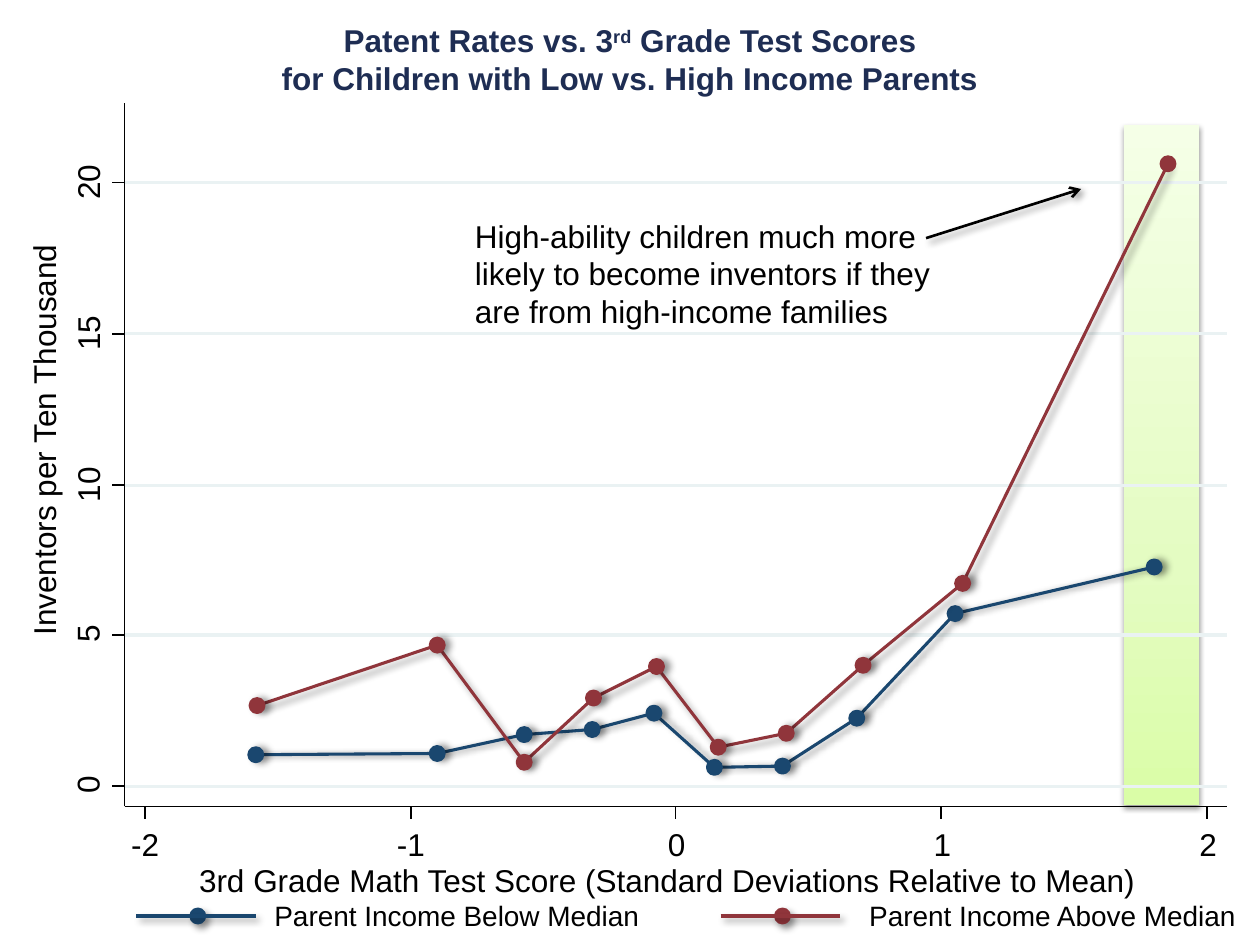
from typing import NamedTuple

from lxml.etree import SubElement
from pptx import Presentation
from pptx.dml.color import RGBColor
from pptx.enum.shapes import MSO_CONNECTOR, MSO_SHAPE
from pptx.enum.text import MSO_AUTO_SIZE, PP_ALIGN
from pptx.oxml.ns import qn
from pptx.util import Emu, Pt

PX = 9144  # EMU per px, 100 px to the inch
FONT = "Arial"
BLACK = RGBColor(0x00, 0x00, 0x00)
NAVY = RGBColor(0x1E, 0x2D, 0x53)
BLUE = RGBColor(0x1A, 0x47, 0x6F)
RED = RGBColor(0x90, 0x35, 0x3B)
GRID = RGBColor(0xEA, 0xF2, 0xF3)
BAND_STOPS = (
    (0, RGBColor(0xDA, 0xFD, 0xA7)),
    (35, RGBColor(0xE4, 0xFC, 0xC2)),
    (100, RGBColor(0xF5, 0xFF, 0xE7)),
)

AXIS_LEFT, AXIS_RIGHT, AXIS_TOP, AXIS_BOTTOM = 99, 974, 82, 640
TICK_LENGTH = 10
DOT_SIZE = 11
LEGEND_Y = 727


class Shadow(NamedTuple):
    alpha: int
    blur: float
    distance: float
    angle: int


class Series(NamedTuple):
    name: str
    color: RGBColor
    points: tuple
    line_shadow: Shadow
    last_dot_shadow: Shadow | None
    legend_left: int
    label_left: int
    label_width: int


RIGHT_SHADOW = Shadow(40, 4, 3, 0)
DIAGONAL_SHADOW = Shadow(40, 4, 3, 45)
BAND_SHADOW = Shadow(38, 3.1, 1.6, 90)

SERIES = (
    Series(
        "Parent Income Below Median", BLUE,
        ((203, 599), (347, 598), (416, 583), (470, 579), (519, 566),
         (567, 609), (621, 608), (680, 570), (758, 487), (916, 450)),
        RIGHT_SHADOW, RIGHT_SHADOW, 108, 208, 313,
    ),
    Series(
        "Parent Income Above Median", RED,
        ((204, 560), (347, 512), (416, 605), (471, 554), (521, 529),
         (570, 593), (624, 582), (685, 528), (764, 463), (927, 130)),
        DIAGONAL_SHADOW, None, 572, 680, 315,
    ),
)


def px(*lengths: int) -> list[Emu]:
    return [Emu(round(length * PX)) for length in lengths]


def set_shadow(item, shadow: Shadow | None) -> None:
    """Give a shape or connector this shadow, or none; call it after its fill and line are set."""
    properties = item.element.spPr
    effects = SubElement(properties, qn("a:effectLst"))
    if shadow:
        outer = SubElement(
            effects, qn("a:outerShdw"), blurRad=str(Pt(shadow.blur)),
            dist=str(Pt(shadow.distance)), dir=str(shadow.angle * 60000), rotWithShape="0",
        )
        color = SubElement(outer, qn("a:srgbClr"), val=str(BLACK))
        SubElement(color, qn("a:alpha"), val=str(shadow.alpha * 1000))


def add_line(slide, start: tuple, end: tuple, color: RGBColor, width: float,
             shadow: Shadow | None = None, arrow: bool = False) -> None:
    line = slide.shapes.add_connector(MSO_CONNECTOR.STRAIGHT, *px(*start, *end))
    line.line.color.rgb = color
    line.line.width = Pt(width)
    if arrow:
        SubElement(line.line._get_or_add_ln(), qn("a:tailEnd"), type="arrow")
    set_shadow(line, shadow)


def add_dot(slide, center: tuple, color: RGBColor, shadow: Shadow | None) -> None:
    left, top = (value - DOT_SIZE / 2 for value in center)
    dot = slide.shapes.add_shape(MSO_SHAPE.OVAL, *px(left, top, DOT_SIZE, DOT_SIZE))
    dot.fill.solid()
    dot.fill.fore_color.rgb = color
    dot.line.color.rgb = color
    dot.line.width = Pt(1.75)
    set_shadow(dot, shadow)


def add_span(para, text: str, size: float, color: RGBColor, bold: bool = False,
             raised: bool = False) -> None:
    span = para.add_run()
    span.text = text
    span.font.name = FONT
    span.font.size = Pt(size)
    span.font.bold = bold
    span.font.color.rgb = color
    if raised:
        span.font._element.set("baseline", "30000")


def add_box(slide, frame: tuple, *, wrap: bool = False, inset: bool = False, rotation: int = 0):
    box = slide.shapes.add_textbox(*px(*frame))
    box.rotation = rotation
    text_frame = box.text_frame
    text_frame.word_wrap = wrap
    text_frame.auto_size = MSO_AUTO_SIZE.SHAPE_TO_FIT_TEXT
    if not inset:
        text_frame.margin_left = text_frame.margin_right = 0
        text_frame.margin_top = text_frame.margin_bottom = 0
    return text_frame


def add_label(slide, text: str, frame: tuple, size: float = 18, **layout) -> None:
    para = add_box(slide, frame, **layout).paragraphs[0]
    add_span(para, text, size, BLACK)


def add_band(slide) -> None:
    band = slide.shapes.add_shape(MSO_SHAPE.RECTANGLE, *px(892, 99, 60, 540))
    band.fill.gradient()
    band.fill.gradient_angle = 90
    stops = band.element.spPr.find(".//" + qn("a:gsLst"))
    for stop in list(stops):
        stops.remove(stop)
    for position, color in BAND_STOPS:
        stop = SubElement(stops, qn("a:gs"), pos=str(position * 1000))
        SubElement(stop, qn("a:srgbClr"), val=str(color))
    band.line.fill.background()
    set_shadow(band, BAND_SHADOW)


def add_title(slide) -> None:
    frame = add_box(slide, (0, 17, 1000, 61), wrap=True)
    first, second = frame.paragraphs[0], frame.add_paragraph()
    first.alignment = second.alignment = PP_ALIGN.CENTER
    add_span(first, "Patent Rates vs. 3", 18, NAVY, bold=True)
    add_span(first, "rd", 18, NAVY, bold=True, raised=True)
    add_span(first, " Grade Test Scores", 18, NAVY, bold=True)
    add_span(second, "for Children with Low vs. High Income Parents", 18, NAVY, bold=True)


def add_series(slide, series: Series) -> None:
    builder = slide.shapes.build_freeform(*series.points[0], scale=PX)
    builder.add_line_segments(series.points[1:], close=False)
    curve = builder.convert_to_shape()
    curve.fill.background()
    curve.line.color.rgb = series.color
    curve.line.width = Pt(1.75)
    set_shadow(curve, series.line_shadow)
    for point in series.points[:-1]:
        add_dot(slide, point, series.color, RIGHT_SHADOW)
    add_dot(slide, series.points[-1], series.color, series.last_dot_shadow)


def add_legend_entry(slide, series: Series) -> None:
    left = series.legend_left
    add_dot(slide, (left + 49, LEGEND_Y), series.color, DIAGONAL_SHADOW)
    add_line(slide, (left, LEGEND_Y), (left + 95, LEGEND_Y), series.color, 1.75, DIAGONAL_SHADOW)
    add_label(slide, series.name, (series.label_left, 708, series.label_width, 37), 16, inset=True)


def add_axes(slide, y_ticks: dict, x_ticks: dict) -> None:
    corner = (AXIS_LEFT, AXIS_BOTTOM)
    add_line(slide, corner, (AXIS_LEFT, AXIS_TOP), BLACK, 0.88)
    for value, y in y_ticks.items():
        add_line(slide, (AXIS_LEFT, y), (AXIS_LEFT - TICK_LENGTH, y), BLACK, 0.88)
        left, width = (59, 26) if value < 10 else (52, 41)
        add_label(slide, str(value), (left, y - 25, width, 36), rotation=270)
    add_line(slide, corner, (AXIS_RIGHT, AXIS_BOTTOM), BLACK, 0.88)
    for value, x in x_ticks.items():
        add_line(slide, (x, AXIS_BOTTOM), (x, AXIS_BOTTOM + TICK_LENGTH), BLACK, 0.88)
        offset, width = (11, 35) if value < 0 else (6, 26)
        add_label(slide, str(value), (x - offset, 655, width, 36))
    add_label(slide, "Inventors per Ten Thousand", (-122, 333, 313, 30), rotation=270)
    add_label(slide, "3rd Grade Math Test Score (Standard Deviations Relative to Mean)",
              (158, 683, 750, 30))


def main() -> None:
    deck = Presentation()
    deck.slide_width, deck.slide_height = px(1000, 750)
    slide = deck.slides.add_slide(deck.slide_layouts[6])
    y_ticks = {value: round(624 - 23.94 * value) for value in range(0, 21, 5)}
    x_ticks = {value: round(536.5 + 210.7 * value) for value in range(-2, 3)}

    add_band(slide)
    add_title(slide)
    for y in y_ticks.values():
        add_line(slide, (AXIS_LEFT, y), (AXIS_RIGHT, y), GRID, 1.75)
    for series in SERIES:
        add_series(slide, series)
    add_axes(slide, y_ticks, x_ticks)
    for series in SERIES:
        add_legend_entry(slide, series)
    add_label(slide, "High-ability children much more likely to become inventors "
              "if they are from high-income families", (367, 167, 408, 101), wrap=True, inset=True)
    add_line(slide, (735, 189), (858, 150), BLACK, 1.5, DIAGONAL_SHADOW, arrow=True)
    deck.save("out.pptx")


if __name__ == "__main__":
    main()
